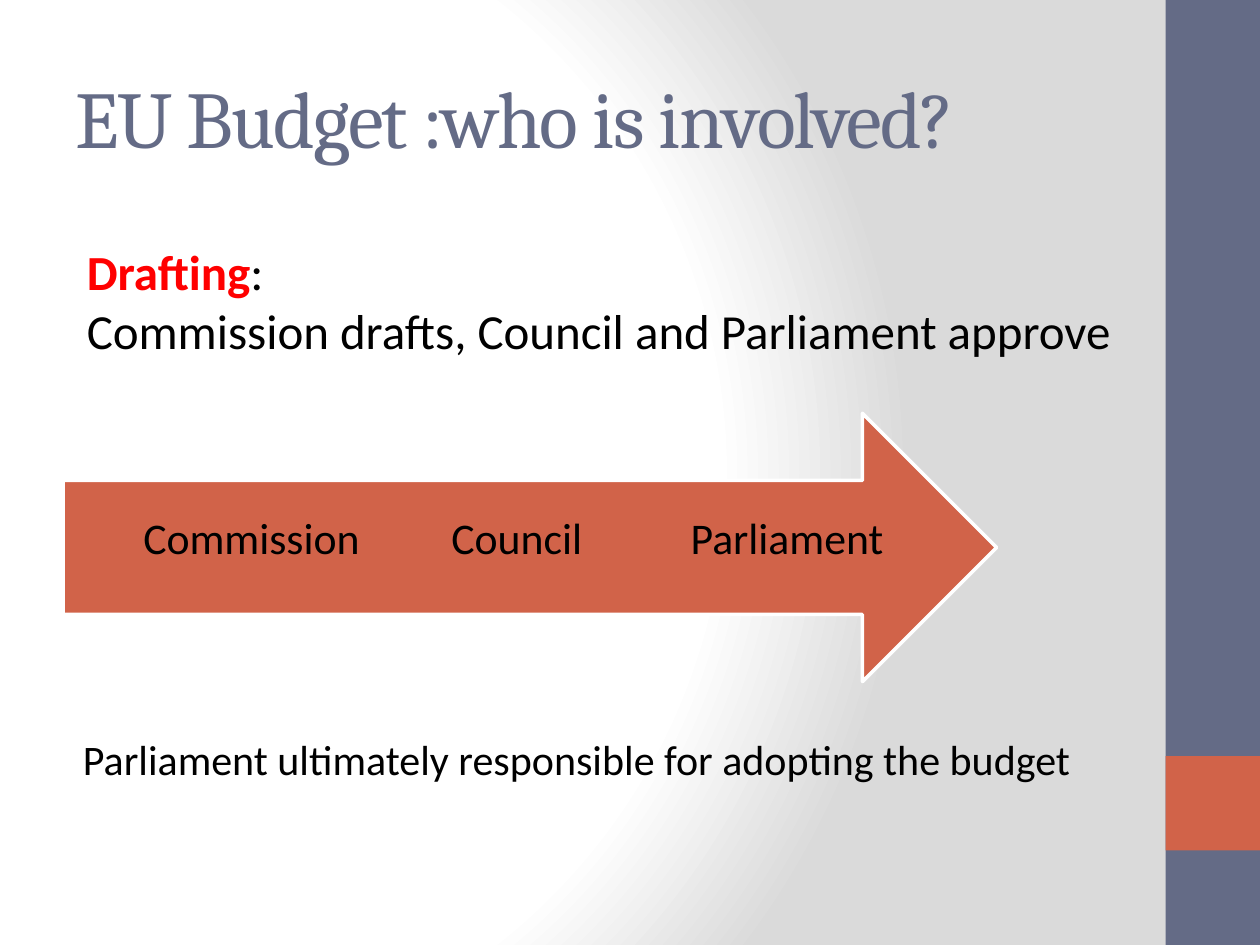
from pptx import Presentation
from pptx.dml.color import RGBColor
from pptx.enum.shapes import MSO_SHAPE
from pptx.enum.text import MSO_ANCHOR, MSO_AUTO_SIZE, PP_ALIGN
from pptx.oxml import parse_xml
from pptx.oxml.ns import nsdecls
from pptx.util import Inches, Pt

COLORS = {"slate": "646B86", "rust": "D16349", "white": "FFFFFF",
          "grey": "DADADA", "red": "FF0000", "black": "000000"}
TITLE = "EU Budget :who is involved?"
BARS = [((9.25, 0, 0.75, 7.5), "slate"), ((9.25, 6, 0.75, 0.75), "rust")]
STEPS = ["Commission ", "Council ", "Parliament "]
STEP_LEFT, STEP_TOP, STEP_W, STEP_H, STEP_PITCH = 1.1, 3.8, 1.79, 0.98, 2.145
NOTES = [
    ((0.59, 1.87, 8.61, 1.04), 28,
     [[("Drafting", "red", True), (":", "black", False)],
      [("Commission drafts, Council and Parliament approve", "black", False)]]),
    ((0.56, 5.77, 8.19, 0.5), 24,
     [[("Parliament ultimately responsible for adopting the budget", "black", False)]]),
]
STOPS = [(0, "white"), (75, "white"), (100, "grey")]


def rgb(name):
    return RGBColor.from_string(COLORS[name])


def box(values):
    return [Inches(v) for v in values]


def apply(obj, **fmt):
    for key, value in fmt.items():
        setattr(obj, key, value)


def add_run(p, text, size, color, font="Calibri", bold=False):
    r = p.add_run()
    r.text = text
    apply(r.font, name=font, size=Pt(size), bold=bold)
    r.font.color.rgb = rgb(color)
    return r


def add_block(s, kind, at, fill):
    sp = s.shapes.add_shape(kind, *box(at))
    sp.shadow.inherit = False
    sp.fill.solid()
    sp.fill.fore_color.rgb = rgb(fill)
    sp.line.fill.background()
    return sp


def set_background(s):
    stops = "".join(f'<a:gs pos="{pos * 1000}"><a:srgbClr val="{COLORS[c]}"/></a:gs>'
                    for pos, c in STOPS)
    s._element.cSld.insert(0, parse_xml(
        f'<p:bg {nsdecls("p", "a")}><p:bgPr><a:gradFill rotWithShape="1">'
        f'<a:gsLst>{stops}</a:gsLst><a:path path="circle">'
        '<a:fillToRect l="20000" t="50000" r="100000" b="50000"/></a:path>'
        '</a:gradFill><a:effectLst/></p:bgPr></p:bg>'))


def main():
    prs = Presentation()
    apply(prs, slide_width=Inches(10), slide_height=Inches(7.5))
    s = prs.slides.add_slide(prs.slide_layouts[5])
    set_background(s)

    for at, fill in BARS:
        add_block(s, MSO_SHAPE.RECTANGLE, at, fill)

    title = s.shapes.title
    left, top, width, height = box((0.5, 0.3, 8.33, 1.25))
    apply(title, left=left, top=top, width=width, height=height)
    tf = title.text_frame
    apply(tf, vertical_anchor=MSO_ANCHOR.MIDDLE, word_wrap=True)
    p = tf.paragraphs[0]
    p.alignment = PP_ALIGN.LEFT
    r = add_run(p, TITLE, 46, "slate", "Cambria")
    r.font._element.set("spc", "-100")

    arrow = add_block(s, MSO_SHAPE.RIGHT_ARROW, (0.5, 3.28, 7.41, 2.13), "rust")
    arrow.line.color.rgb = rgb("white")
    arrow.line.width = Pt(2)

    for i, step in enumerate(STEPS):
        at = (STEP_LEFT + i * STEP_PITCH, STEP_TOP, STEP_W, STEP_H)
        tf = s.shapes.add_textbox(*box(at)).text_frame
        apply(tf, word_wrap=True, vertical_anchor=MSO_ANCHOR.MIDDLE,
              margin_left=0, margin_right=0,
              margin_top=Inches(0.28), margin_bottom=Inches(0.28))
        p = tf.paragraphs[0]
        apply(p, alignment=PP_ALIGN.CENTER, line_spacing=0.9)
        add_run(p, step, 25, "black")

    for at, size, lines in NOTES:
        tf = s.shapes.add_textbox(*box(at)).text_frame
        apply(tf, word_wrap=False, auto_size=MSO_AUTO_SIZE.SHAPE_TO_FIT_TEXT)
        for i, line in enumerate(lines):
            p = tf.add_paragraph() if i else tf.paragraphs[0]
            for text, color, bold in line:
                add_run(p, text, size, color, bold=bold)

    prs.save("out.pptx")


if __name__ == "__main__":
    main()
